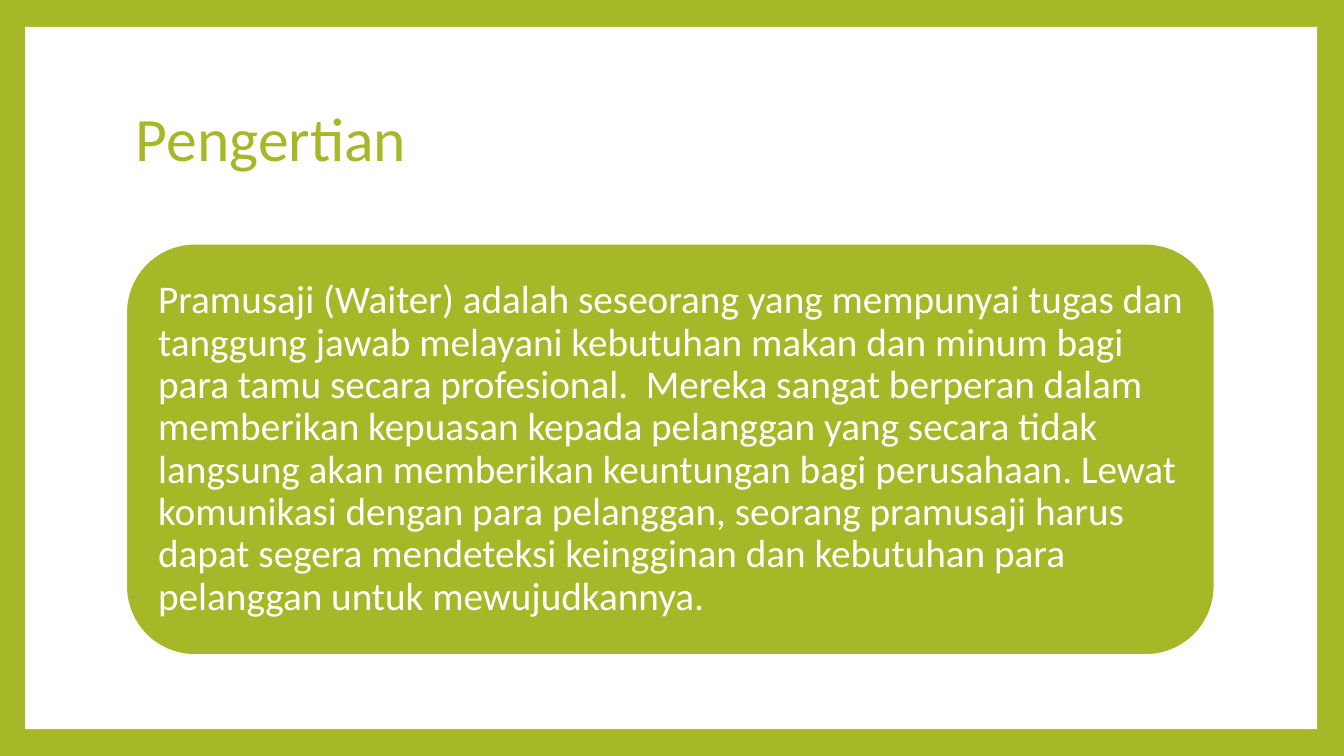
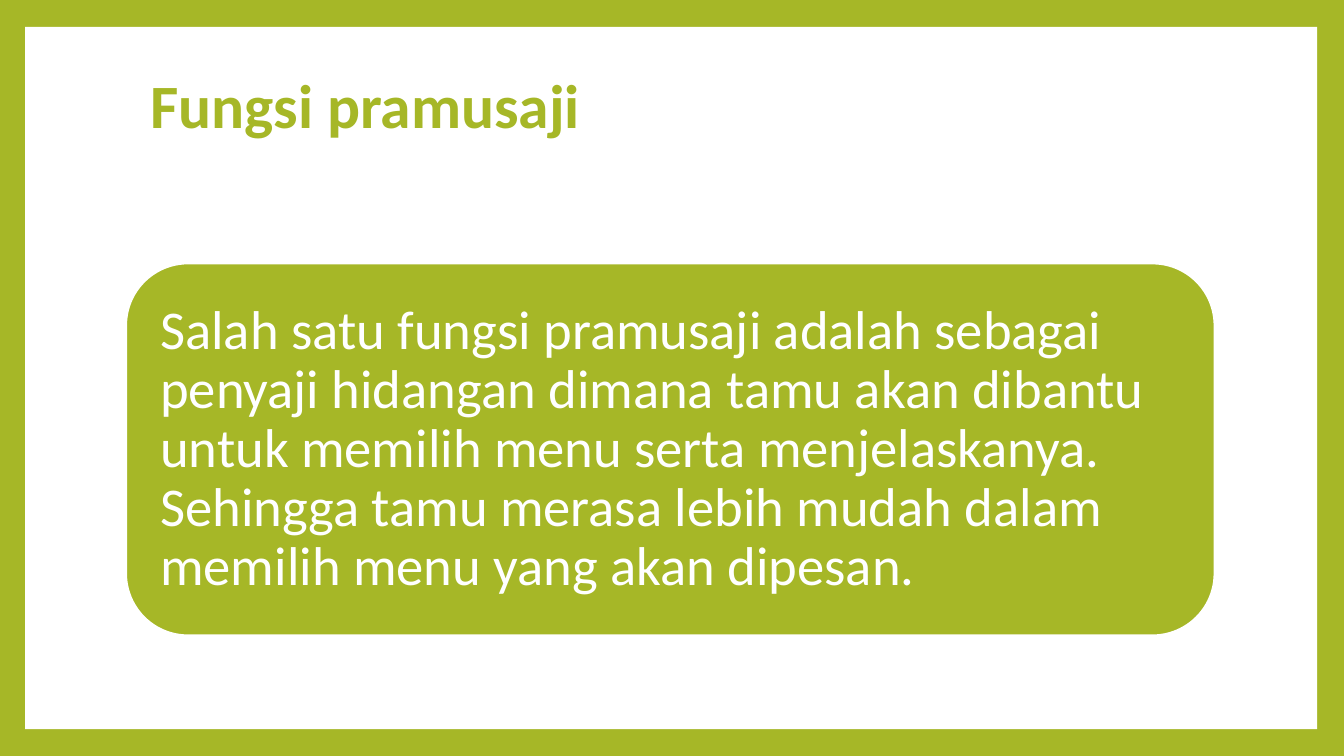
from dataclasses import dataclass
from typing import Any

from pptx import Presentation, util as u
from pptx.dml.color import RGBColor
from pptx.enum import shapes, text

COLORS = {"green": "A6B727", "white": "FFFFFF"}
FONT = "Calibri"
WIDTH, HEIGHT = u.Inches(13.33), u.Inches(7.5)
COLUMNS, ROWS = 160, 90
CARD_MIDDLE = 53.5  # grid row on which every card is centred


@dataclass(frozen=True)
class Area:
    """A rectangle in grid columns and rows."""
    column: float
    row: float
    columns: float
    rows: float

    def box(self) -> tuple[int, ...]:
        return (round(self.column * WIDTH / COLUMNS), round(self.row * HEIGHT / ROWS),
                round(self.columns * WIDTH / COLUMNS), round(self.rows * HEIGHT / ROWS))


@dataclass(frozen=True)
class Topic:
    title: str
    body: str
    card_rows: float
    body_size: float
    body_inset: float
    title_bold: bool = False
    title_left: float = 0.1
    title_bottom: float = 0.05


PANEL = Area(3, 3.2, 153.8, 83.6)
TITLE = Area(15, 8, 129.6, 17.8)

TOPICS = [
    Topic("Pengertian",
          "Pramusaji (Waiter) adalah seseorang yang mempunyai tugas dan tanggung jawab "
          "melayani kebutuhan makan dan minum bagi para tamu secara profesional.  Mereka "
          "sangat berperan dalam memberikan kepuasan kepada pelanggan yang secara tidak "
          "langsung akan memberikan keuntungan bagi perusahaan. Lewat komunikasi dengan "
          "para pelanggan, seorang pramusaji harus dapat segera mendeteksi keingginan dan "
          "kebutuhan para pelanggan untuk mewujudkannya.",
          card_rows=49, body_size=28, body_inset=0.12),
    Topic("Fungsi pramusaji",
          "Salah satu fungsi pramusaji adalah sebagai penyaji hidangan dimana tamu akan "
          "dibantu untuk memilih menu serta menjelaskanya. Sehingga tamu merasa lebih "
          "mudah dalam memilih menu yang akan dipesan.",
          card_rows=44.3, body_size=39, body_inset=0.16,
          title_bold=True, title_left=0.24, title_bottom=0.72),
]


def color(name: str) -> RGBColor:
    return RGBColor.from_string(COLORS[name])


def apply(target: Any, values: dict[str, Any]) -> None:
    for name, value in values.items():
        setattr(target, name, value)


def write(shape: Any, words: str, size: float, ink: str, insets: dict[str, float],
          bold: bool = False) -> None:
    frame = shape.text_frame
    apply(frame, {"word_wrap": True, "vertical_anchor": text.MSO_ANCHOR.MIDDLE})
    apply(frame, {f"margin_{side}": u.Inches(inset) for side, inset in insets.items()})
    paragraph = frame.paragraphs[0]
    apply(paragraph, {"alignment": text.PP_ALIGN.LEFT, "line_spacing": 0.9})
    run = paragraph.add_run()
    run.text = words
    apply(run.font, {"name": FONT, "size": u.Pt(size), "bold": bold})
    run.font.color.rgb = color(ink)


def add_block(slide: Any, kind: Any, area: Area, fill: str) -> Any:
    block = slide.shapes.add_shape(kind, *area.box())
    block.shadow.inherit = False
    block.fill.solid()
    block.fill.fore_color.rgb = color(fill)
    block.line.fill.background()
    return block


def add_topic(deck: Any, topic: Topic) -> None:
    slide = deck.slides.add_slide(deck.slide_layouts[6])

    # Green border around a white panel
    slide.background.fill.solid()
    slide.background.fill.fore_color.rgb = color("green")
    add_block(slide, shapes.MSO_SHAPE.RECTANGLE, PANEL, "white")

    # Title
    title = slide.shapes.add_textbox(*TITLE.box())
    write(title, topic.title, 44, "green",
          {"left": topic.title_left, "bottom": topic.title_bottom}, topic.title_bold)

    # Rounded card with the explanation
    area = Area(TITLE.column, CARD_MIDDLE - topic.card_rows / 2,
                TITLE.columns, topic.card_rows)
    card = add_block(slide, shapes.MSO_SHAPE.ROUNDED_RECTANGLE, area, "green")
    card.line.color.rgb = color("white")
    card.line.width = u.Pt(1.5)
    write(card, topic.body, topic.body_size, "white",
          dict.fromkeys(("left", "top", "right", "bottom"), topic.body_inset))


def main() -> None:
    deck = Presentation()
    apply(deck, {"slide_width": WIDTH, "slide_height": HEIGHT})
    for topic in TOPICS:
        add_topic(deck, topic)
    deck.save("out.pptx")


if __name__ == "__main__":
    main()
